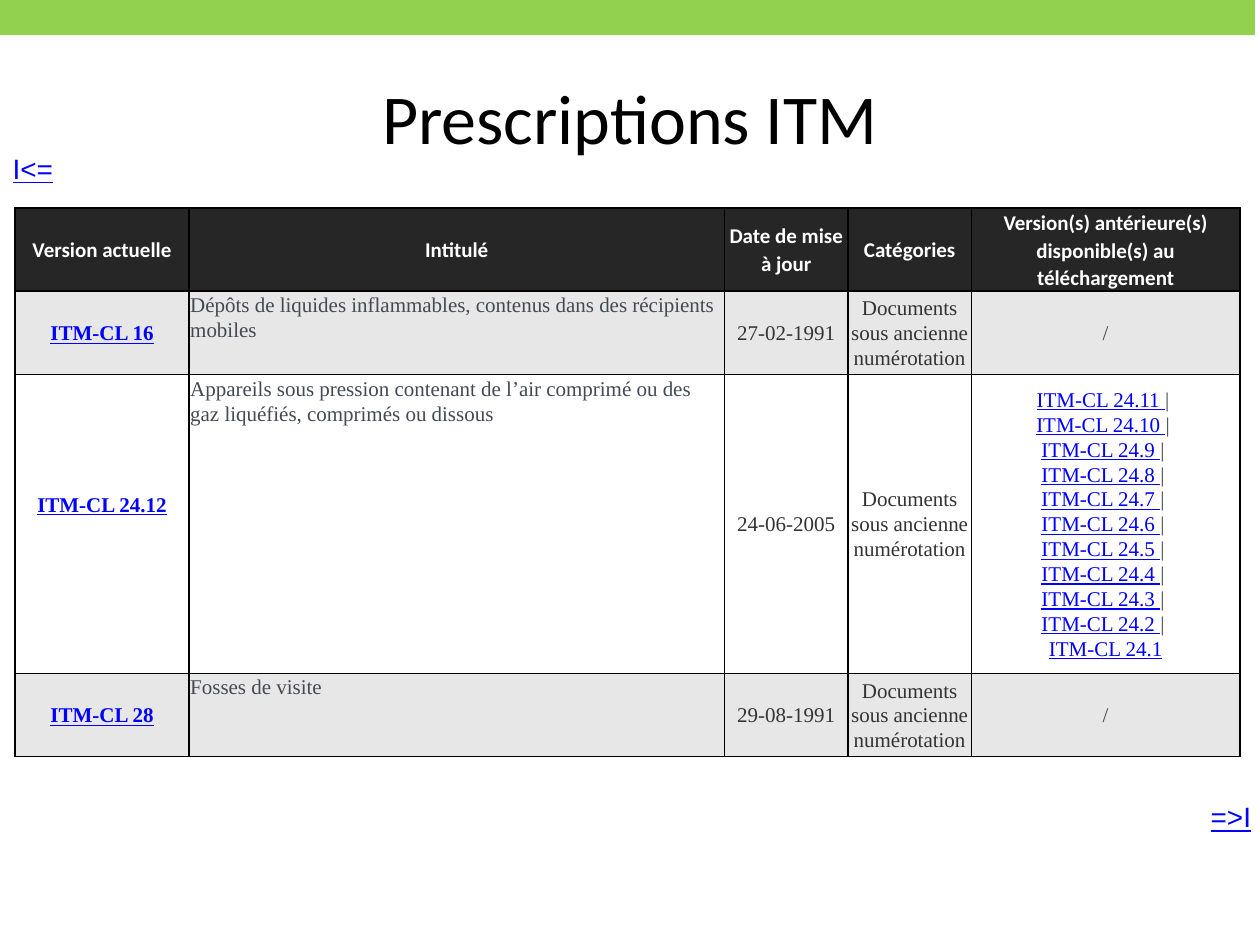
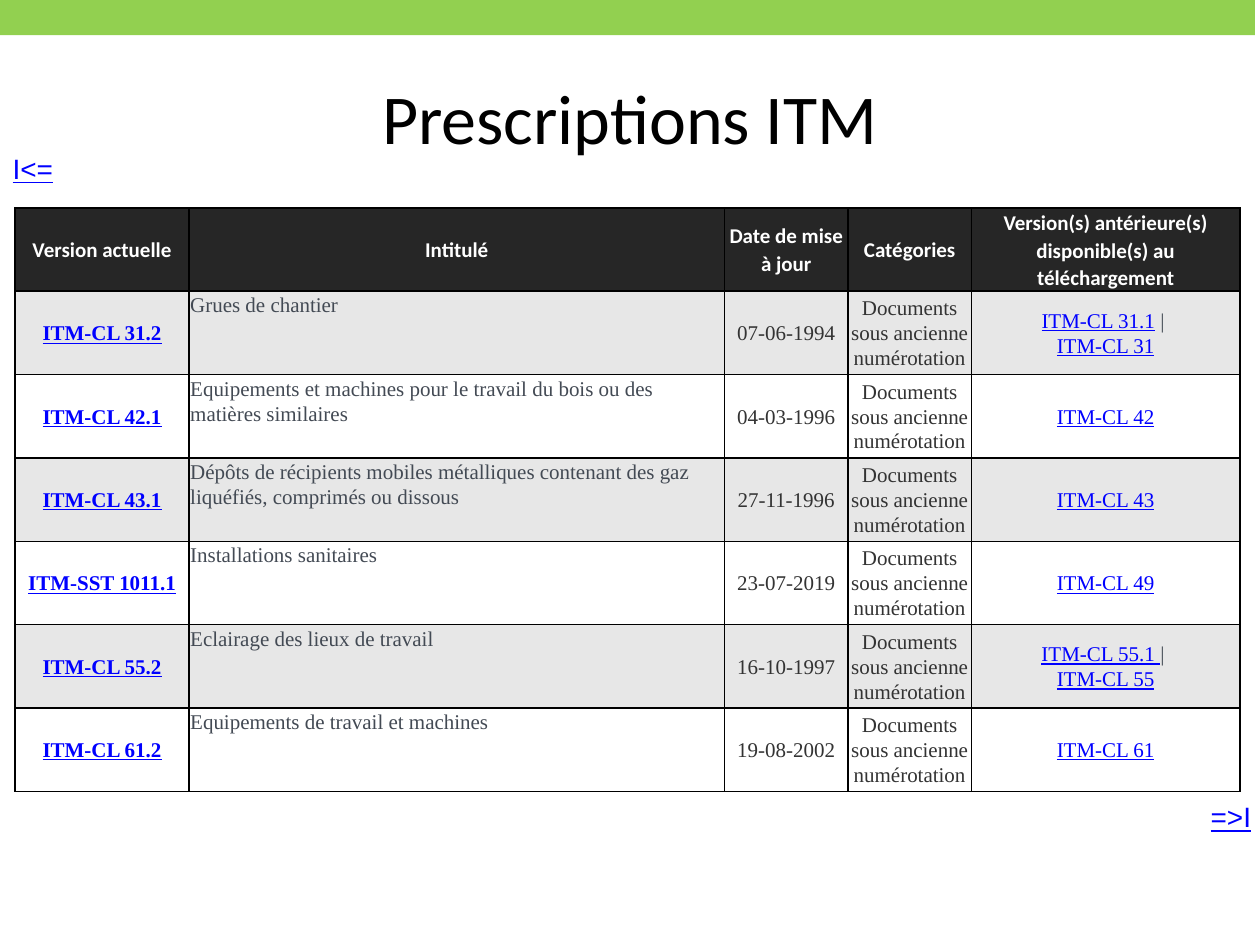
"""Build two slides listing the ITM prescriptions and their earlier versions."""
from lxml.etree import SubElement
from pptx import Presentation
from pptx.dml.color import RGBColor
from pptx.enum.shapes import MSO_SHAPE as Shape
from pptx.enum.text import MSO_ANCHOR as Anchor, PP_ALIGN as Align
from pptx.oxml.ns import qn
from pptx.util import Inches, Pt

GREEN, BLACK, WHITE, LINK = "92D050", "000000", "FFFFFF", "0000FF"
HEADER_FILL, STRIPE, GREY, DARK_GREY = "262626", "E7E7E7", "434A54", "333333"
SERIF = "Times New Roman"
NO_STYLE = "{2D5ABB26-0587-4C30-8999-92F81FD0307C}"
CATEGORY = "Documents sous ancienne numérotation"
HEADERS = [
    "Version actuelle",
    "Intitulé",
    "Date de mise à jour",
    "Catégories",
    "Version(s) antérieure(s) disponible(s) au téléchargement",
]
COLUMN_WIDTHS = [1.38, 4.25, 0.98, 0.98, 2.13]
FORWARD_WIDTHS = [1.38, 0.57, 2.48, 3.04, 0.82, 1.38]
ROW_HEIGHT = 0.64

PAGES = [
    {
        "back_widths": [1.4, 1.4, 1.93, 2.38, 1.4, 1.4],
        "rows": [
            ("ITM-CL 16", "Dépôts de liquides inflammables, contenus dans des récipients mobiles",
             "27-02-1991", []),
            ("ITM-CL 24.12", "Appareils sous pression contenant de l’air comprimé ou des gaz "
             "liquéfiés, comprimés ou dissous",
             "24-06-2005", [f"ITM-CL 24.{number} " for number in range(11, 1, -1)] + ["ITM-CL 24.1"]),
            ("ITM-CL 28", "Fosses de visite", "29-08-1991", []),
        ],
    },
    {
        "back_widths": [0.59, 1.4, 1.93, 2.38, 1.4, 1.4],
        "rows": [
            ("ITM-CL 31.2", "Grues de chantier", "07-06-1994", ["ITM-CL 31.1", "ITM-CL 31"]),
            ("ITM-CL 42.1", "Equipements et machines pour le travail du bois ou des matières similaires",
             "04-03-1996", ["ITM-CL 42"]),
            ("ITM-CL 43.1", "Dépôts de récipients mobiles métalliques contenant des gaz liquéfiés, "
             "comprimés ou dissous",
             "27-11-1996", ["ITM-CL 43"]),
            ("ITM-SST 1011.1", "Installations sanitaires", "23-07-2019", ["ITM-CL 49"]),
            ("ITM-CL 55.2", "Eclairage des lieux de travail", "16-10-1997",
             ["ITM-CL 55.1 ", "ITM-CL 55"]),
            ("ITM-CL 61.2", "Equipements de travail et machines", "19-08-2002", ["ITM-CL 61"]),
        ],
    },
]


def write(paragraph, text, size=12, font=SERIF, color=GREY, bold=False, underline=False,
          align=Align.CENTER):
    """Add a formatted run to a paragraph."""
    paragraph.alignment = align
    run = paragraph.add_run()
    run.text = text
    run.font.size = Pt(size)
    run.font.name = font
    run.font.bold = bold
    run.font.underline = underline
    run.font.color.rgb = RGBColor.from_string(color)


def add_plain_table(slide, left, top, widths, heights):
    """Add a table without style, with the given column widths and row heights."""
    table = slide.shapes.add_table(len(heights), len(widths), Inches(left), Inches(top),
                                   Inches(sum(widths)), Inches(sum(heights))).table
    table.first_row = table.horz_banding = False
    table._tbl.tblPr.find(qn("a:tableStyleId")).text = NO_STYLE
    for column, width in zip(table.columns, widths):
        column.width = Inches(width)
    for row, height in zip(table.rows, heights):
        row.height = Inches(height)
    return table


presentation = Presentation()
presentation.slide_width, presentation.slide_height = Inches(10), Inches(7.5)

for page in PAGES:
    slide = presentation.slides.add_slide(presentation.slide_layouts[6])

    band = slide.shapes.add_shape(Shape.RECTANGLE, 0, 0, Inches(9.96), Inches(0.28))
    band.shadow.inherit = False
    band.fill.solid()
    band.fill.fore_color.rgb = RGBColor.from_string(GREEN)
    band.line.fill.background()

    title = slide.shapes.add_textbox(Inches(0.5), Inches(0.3), Inches(9), Inches(1.25))
    title.text_frame.word_wrap = True
    title.text_frame.vertical_anchor = Anchor.MIDDLE
    write(title.text_frame.paragraphs[0], "Prescriptions ITM", size=40, font="Calibri", color=BLACK)

    for text, left, top, widths, height, column, align in [
        ("I<=", 0, 0.99, page["back_widths"], 0.71, 0, Align.LEFT),
        ("=>I", 0.36, 6.11, FORWARD_WIDTHS, 0.77, 5, Align.RIGHT),
    ]:
        navigation = add_plain_table(slide, left, top, widths, [height])
        cell = navigation.cell(0, column)
        cell.vertical_anchor = Anchor.MIDDLE
        write(cell.text_frame.paragraphs[0], text, size=16, font="Arial", color=LINK,
              underline=True, align=align)

    rows = page["rows"]
    table = add_plain_table(slide, 0.12, 1.65, COLUMN_WIDTHS, [ROW_HEIGHT] * (len(rows) + 1))
    for row_index, row in enumerate(table.rows):
        fill = HEADER_FILL if row_index == 0 else STRIPE if row_index % 2 else WHITE
        for column_index, cell in enumerate(row.cells):
            cell.margin_left = cell.margin_right = Inches(0.01)
            cell.margin_top = cell.margin_bottom = Inches(0.01)
            is_heading = row_index > 0 and column_index == 1
            cell.vertical_anchor = Anchor.TOP if is_heading else Anchor.MIDDLE
            for side in ("a:lnL", "a:lnR", "a:lnT", "a:lnB"):
                border = SubElement(cell._tc.get_or_add_tcPr(), qn(side), w=str(Pt(1)))
                SubElement(SubElement(border, qn("a:solidFill")), qn("a:srgbClr"), val=BLACK)
            cell.fill.solid()
            cell.fill.fore_color.rgb = RGBColor.from_string(fill)
            paragraph = cell.text_frame.paragraphs[0]
            paragraph.line_spacing = 1.07
            paragraph.space_after = Pt(8)

    for cell, header in zip(table.rows[0].cells, HEADERS):
        write(cell.text_frame.paragraphs[0], header, font="Calibri", color=WHITE, bold=True)

    for row_index, (version, heading, date, earlier_versions) in enumerate(rows, start=1):
        cells = list(table.rows[row_index].cells)
        paragraphs = [cell.text_frame.paragraphs[0] for cell in cells]
        write(paragraphs[0], version, color=LINK, bold=True, underline=True)
        write(paragraphs[1], heading, align=Align.LEFT)
        write(paragraphs[2], date, color=DARK_GREY)
        write(paragraphs[3], CATEGORY, color=DARK_GREY)
        if version == "ITM-CL 24.12":
            cells[0].margin_bottom = Inches(0.32)
        if not earlier_versions:
            write(paragraphs[4], "/")
        for index, earlier in enumerate(earlier_versions, start=1):
            write(paragraphs[4], earlier, color=LINK, underline=True)
            if index < len(earlier_versions):
                write(paragraphs[4], "| " if earlier.endswith(" ") else " | ")
                paragraphs[4].add_line_break()

presentation.save("out.pptx")
